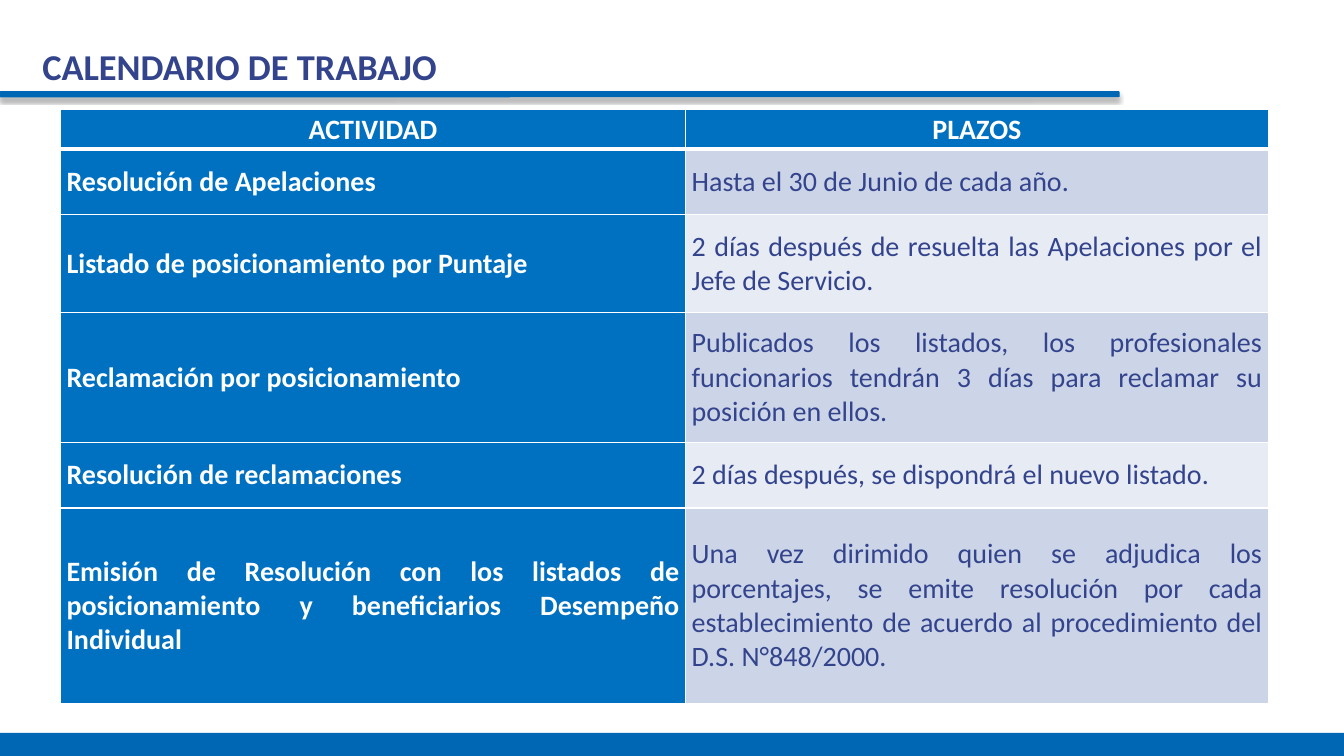
"""Build the work calendar slide with its table of activities and deadlines."""
from dataclasses import dataclass

from lxml.etree import SubElement
from pptx import Presentation
from pptx.dml.color import RGBColor
from pptx.enum.shapes import MSO_SHAPE
from pptx.enum.text import MSO_ANCHOR, PP_ALIGN
from pptx.oxml.ns import qn
from pptx.shapes.autoshape import Shape
from pptx.slide import Slide
from pptx.table import _Cell
from pptx.text.text import _Paragraph
from pptx.util import Inches, Pt

WHITE = RGBColor(0xFF, 0xFF, 0xFF)
BAR_BLUE = RGBColor(0x00, 0x67, 0xB4)
CELL_BLUE = RGBColor(0x00, 0x70, 0xC0)
TEXT_BLUE = RGBColor(0x33, 0x44, 0x8D)
DARK_BAND = RGBColor(0xCC, 0xD5, 0xE8)
LIGHT_BAND = RGBColor(0xE7, 0xEB, 0xF4)

FONT = "Calibri"
COLUMN_WIDTHS = (6.2, 5.78)


@dataclass(frozen=True)
class Bar:
    preset: MSO_SHAPE
    left: float
    top: float
    width: float
    height: float


@dataclass(frozen=True)
class CalendarRow:
    activity: str
    deadline: str
    height: float


TITLE_BAR = Bar(MSO_SHAPE.ROUNDED_RECTANGLE, 0, 0.91, 11.1, 0.05)
FOOTER_BAR = Bar(MSO_SHAPE.RECTANGLE, 0, 7.27, 13.33, 0.23)

CALENDAR = (
    CalendarRow("ACTIVIDAD", "PLAZOS", 0.39),
    CalendarRow("Resolución de Apelaciones", "Hasta el 30 de Junio de cada año.", 0.65),
    CalendarRow(
        "Listado de posicionamiento por Puntaje",
        "2 días después de resuelta las Apelaciones por el Jefe de Servicio.",
        0.97,
    ),
    CalendarRow(
        "Reclamación por posicionamiento",
        "Publicados los listados, los profesionales funcionarios tendrán 3 días "
        "para reclamar su posición en ellos.",
        1.29,
    ),
    CalendarRow(
        "Resolución de reclamaciones",
        "2 días después, se dispondrá el nuevo listado.",
        0.65,
    ),
    CalendarRow(
        "Emisión de Resolución con los listados de posicionamiento y beneficiarios "
        "Desempeño Individual",
        "Una vez dirimido quien se adjudica los porcentajes, se emite resolución por "
        "cada establecimiento de acuerdo al procedimiento del D.S. N°848/2000.",
        1.94,
    ),
)


def add_text(paragraph: _Paragraph, text: str, size: int, color: RGBColor, bold: bool) -> None:
    run = paragraph.add_run()
    run.text = text
    run.font.name = FONT
    run.font.size = Pt(size)
    run.font.bold = bold
    run.font.color.rgb = color


def add_bar(slide: Slide, bar: Bar) -> Shape:
    shape = slide.shapes.add_shape(
        bar.preset, Inches(bar.left), Inches(bar.top), Inches(bar.width), Inches(bar.height)
    )
    shape.shadow.inherit = False
    shape.fill.solid()
    shape.fill.fore_color.rgb = BAR_BLUE
    shape.line.fill.background()
    return shape


def add_title_bar(slide: Slide) -> None:
    shape = add_bar(slide, TITLE_BAR)
    shape.adjustments[0] = 0.12
    shape.line.color.rgb = BAR_BLUE
    shape.line.width = Pt(0.75)
    effects = shape._element.spPr.find(qn("a:effectLst"))
    shadow = SubElement(
        effects, qn("a:outerShdw"), blurRad=str(Pt(3.1)), dist=str(Pt(1.8)),
        dir="5400000", rotWithShape="0",
    )
    color = SubElement(shadow, qn("a:srgbClr"), val="000000")
    SubElement(color, qn("a:alpha"), val="35000")


def add_title(slide: Slide) -> None:
    box = slide.shapes.add_textbox(Inches(0.42), Inches(0.43), Inches(12.67), Inches(0.44))
    frame = box.text_frame
    frame.word_wrap = True
    frame.vertical_anchor = MSO_ANCHOR.MIDDLE
    frame.margin_left = frame.margin_right = frame.margin_top = frame.margin_bottom = 0
    add_text(frame.paragraphs[0], "CALENDARIO DE TRABAJO", 26, TEXT_BLUE, True)


def set_borders(cell: _Cell, top: int, bottom: int) -> None:
    properties = cell._tc.get_or_add_tcPr()
    for side, width in (("L", 1), ("R", 1), ("T", top), ("B", bottom)):
        line = SubElement(properties, qn(f"a:ln{side}"), w=str(Pt(width)))
        fill = SubElement(line, qn("a:solidFill"))
        SubElement(fill, qn("a:srgbClr"), val=str(WHITE))


def fill_cell(cell: _Cell, text: str, row: int, column: int) -> None:
    is_header = row == 0
    is_heading = is_header or column == 0
    band = DARK_BAND if row % 2 else LIGHT_BAND
    set_borders(cell, 3 if row == 1 else 1, 3 if is_header else 1)
    cell.fill.solid()
    cell.fill.fore_color.rgb = CELL_BLUE if is_heading else band
    cell.vertical_anchor = MSO_ANCHOR.MIDDLE
    cell.margin_left = cell.margin_right = Inches(0.06)
    cell.margin_top = cell.margin_bottom = 0
    paragraph = cell.text_frame.paragraphs[0]
    paragraph.alignment = PP_ALIGN.CENTER if is_header else PP_ALIGN.JUSTIFY
    add_text(paragraph, text, 20, WHITE if is_heading else TEXT_BLUE, is_heading)


def add_calendar(slide: Slide) -> None:
    total_height = sum(row.height for row in CALENDAR)
    table = slide.shapes.add_table(
        len(CALENDAR), len(COLUMN_WIDTHS), Inches(0.6), Inches(1.09),
        Inches(sum(COLUMN_WIDTHS)), Inches(total_height),
    ).table
    for column, width in zip(table.columns, COLUMN_WIDTHS):
        column.width = Inches(width)
    for row_index, row in enumerate(CALENDAR):
        table.rows[row_index].height = Inches(row.height)
        for column_index, text in enumerate((row.activity, row.deadline)):
            fill_cell(table.cell(row_index, column_index), text, row_index, column_index)


def main() -> None:
    presentation = Presentation()
    presentation.slide_width = Inches(13.33)
    presentation.slide_height = Inches(7.5)
    slide = presentation.slides.add_slide(presentation.slide_layouts[6])
    add_title_bar(slide)
    add_bar(slide, FOOTER_BAR)
    add_calendar(slide)
    add_title(slide)
    presentation.save("out.pptx")


if __name__ == "__main__":
    main()
